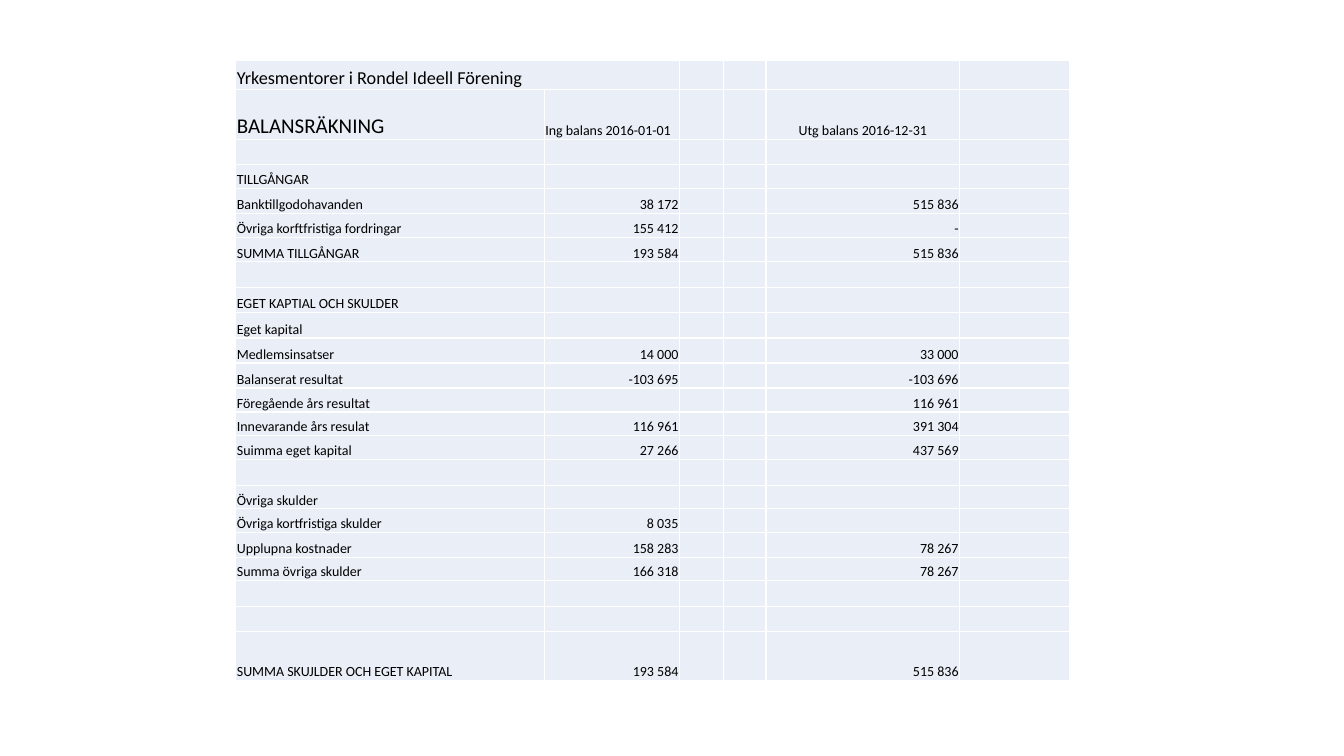
from lxml.etree import SubElement
from pptx import Presentation
from pptx.dml.color import RGBColor
from pptx.enum.text import MSO_ANCHOR, PP_ALIGN
from pptx.oxml.ns import qn
from pptx.util import Inches, Pt

COLUMN_WIDTHS = [22.95, 10.05, 3.3, 3.15, 14.4, 8.2]
OPENING, CLOSING = 1, 4
TITLE, HEADING, BODY = 13, 15, 10
BALANCE_ROWS = [
    (3.8, "Yrkesmentorer i Rondel Ideell Förening", "", ""),
    (6.6, "BALANSRÄKNING", "Ing balans 2016-01-01", "Utg balans 2016-12-31"),
    (3.3, "", "", ""),
    (3.2, "TILLGÅNGAR", "", ""),
    (3.3, "Banktillgodohavanden", "38 172", "515 836"),
    (3.2, "Övriga korftfristiga fordringar", "155 412", "-"),
    (3.2, "SUMMA TILLGÅNGAR", "193 584", "515 836"),
    (3.4, "", "", ""),
    (3.3, "EGET KAPTIAL OCH SKULDER", "", ""),
    (3.4, "Eget kapital", "", ""),
    (3.3, "Medlemsinsatser", "14 000", "33 000"),
    (3.3, "Balanserat resultat", "-103 695", "-103 696"),
    (3.2, "Föregående års resultat", "", "116 961"),
    (3.1, "Innevarande års resulat", "116 961", "391 304"),
    (3.2, "Suimma eget kapital", "27 266", "437 569"),
    (3.4, "", "", ""),
    (3.1, "Övriga skulder", "", ""),
    (3.1, "Övriga kortfristiga skulder", "8 035", ""),
    (3.3, "Upplupna kostnader", "158 283", "78 267"),
    (3.1, "Summa övriga skulder", "166 318", "78 267"),
    (3.4, "", "", ""),
    (3.3, "", "", ""),
    (6.5, "SUMMA SKUJLDER OCH EGET KAPITAL", "193 584", "515 836"),
]


def color(value):
    """Turn a hex string into a colour."""
    return RGBColor.from_string(value)


class BalanceSlide:
    """Style and current page, measured on a grid of 100 columns by 100 rows."""

    font = "Calibri"
    ink, paper, rule = "000000", "EAEFF7", "FFFFFF"
    cell_format = {
        "vertical_anchor": MSO_ANCHOR.BOTTOM,
        "margin_left": Inches(0.01),
        "margin_right": Inches(0.01),
        "margin_top": Inches(0.01),
        "margin_bottom": 0,
    }
    table_format = {"first_row": False, "horz_banding": False}

    def __init__(self, deck):
        """Add a blank page to the deck."""
        self.deck = deck
        self.page = deck.slides.add_slide(deck.slide_layouts[6])

    def across(self, columns):
        """Convert grid columns to a length."""
        return round(self.deck.slide_width * columns / 100)

    def down(self, rows):
        """Convert grid rows to a length."""
        return round(self.deck.slide_height * rows / 100)

    def apply(self, target, values):
        """Set each format value on the target."""
        for name, value in values.items():
            setattr(target, name, value)

    def table(self, left, top, widths, heights):
        """Add a plain table with the given column widths and row heights."""
        frame = self.page.shapes.add_table(
            len(heights), len(widths), self.across(left), self.down(top),
            self.across(sum(widths)), self.down(sum(heights)))
        table = frame.table
        self.apply(table, self.table_format)
        for column, width in zip(table.columns, widths):
            column.width = self.across(width)
        for row, height in zip(table.rows, heights):
            row.height = self.down(height)
        return table

    def borders(self, cell):
        """Draw all four sides of a cell."""
        properties = cell._tc.get_or_add_tcPr()
        for side in ("lnL", "lnR", "lnT", "lnB"):
            line = SubElement(properties, qn(f"a:{side}"), w=str(Pt(1)))
            fill = SubElement(line, qn("a:solidFill"))
            SubElement(fill, qn("a:srgbClr"), val=self.rule)

    def cell(self, cell, text, size, alignment):
        """Format one cell and write its text."""
        self.apply(cell, self.cell_format)
        self.borders(cell)
        cell.fill.solid()
        cell.fill.fore_color.rgb = color(self.paper)
        para = cell.text_frame.paragraphs[0]
        para.alignment = alignment
        if text:
            span = para.add_run()
            span.text = text
            self.apply(span.font, {"name": self.font, "size": Pt(size)})
            span.font.color.rgb = color(self.ink)
        else:
            SubElement(para._p, qn("a:endParaRPr"), sz=str(size * 100))


def main():
    """Build the balance sheet."""
    deck = Presentation()
    deck.slide_width, deck.slide_height = Inches(13.33), Inches(7.5)
    slide = BalanceSlide(deck)
    heights = [row[0] for row in BALANCE_ROWS]
    table = slide.table(17.55, 8.05, COLUMN_WIDTHS, heights)
    label_sizes = {0: TITLE, 1: HEADING}
    header_alignments = {OPENING: PP_ALIGN.LEFT, CLOSING: PP_ALIGN.CENTER}
    for row, (_, label, opening, closing) in enumerate(BALANCE_ROWS):
        texts = {0: label, OPENING: opening, CLOSING: closing}
        for column in range(len(COLUMN_WIDTHS)):
            size = label_sizes.get(row, BODY) if column == 0 else BODY
            alignment = PP_ALIGN.RIGHT if column else PP_ALIGN.LEFT
            if row == 1:
                alignment = header_alignments.get(column, alignment)
            slide.cell(table.cell(row, column), texts.get(column, ""), size, alignment)
    table.cell(0, 0).merge(table.cell(0, OPENING))
    deck.save("out.pptx")


if __name__ == "__main__":
    main()
